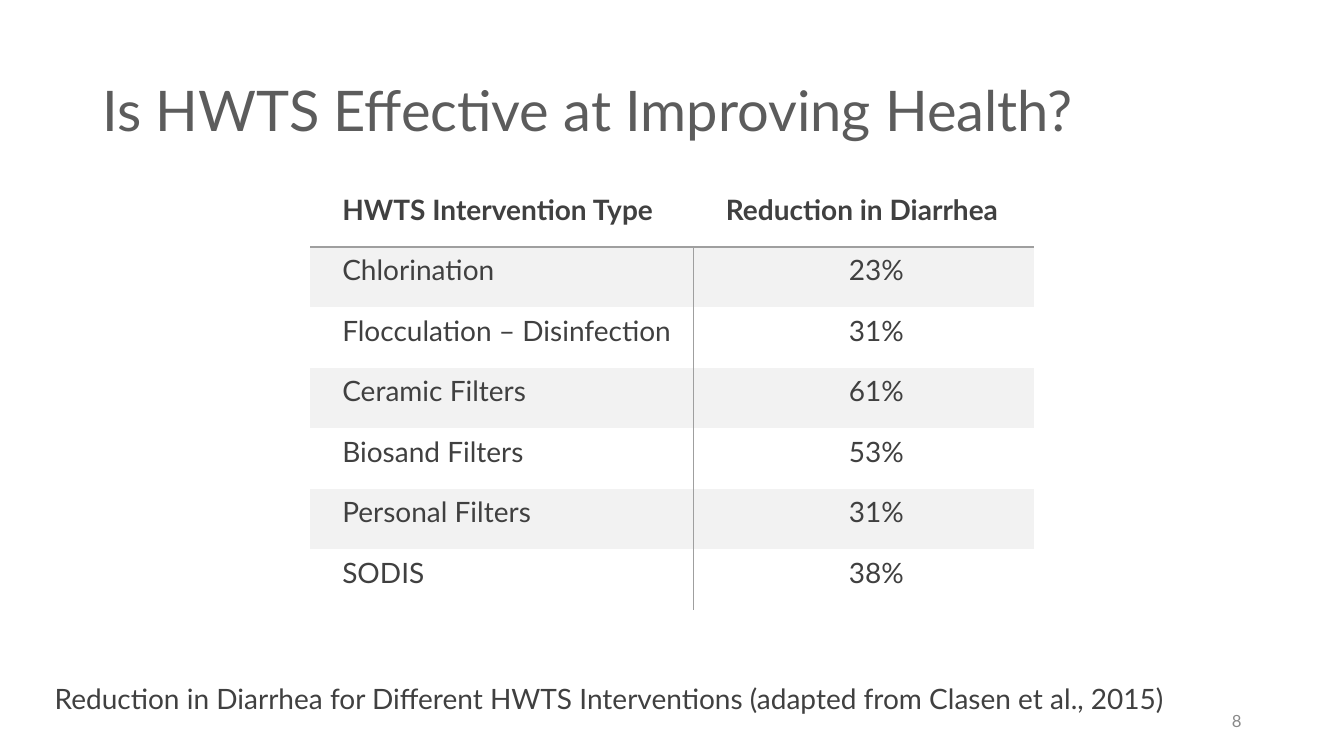
from lxml.etree import SubElement
from pptx import Presentation
from pptx.dml.color import RGBColor
from pptx.enum.text import MSO_ANCHOR, PP_ALIGN
from pptx.oxml.ns import qn
from pptx.util import Pt

WHITE = RGBColor(0xFF, 0xFF, 0xFF)
BAND = RGBColor(0xF2, 0xF2, 0xF2)
RULE = RGBColor(0x9F, 0x9F, 0x9F)
TITLE = RGBColor(0x5C, 0x5C, 0x5C)
BODY = RGBColor(0x40, 0x40, 0x40)
MUTED = RGBColor(0x89, 0x89, 0x89)
FACE = "Lato"

ROWS = [
    ("HWTS Intervention Type", "Reduction in Diarrhea"),
    ("Chlorination", "23%"),
    ("Flocculation – Disinfection", "31%"),
    ("Ceramic Filters", "61%"),
    ("Biosand Filters", "53%"),
    ("Personal Filters", "31%"),
    ("SODIS", "38%"),
]


def style(para, size, color, bold=False):
    """Format every run of a paragraph."""
    for run in para.runs:
        font = run.font
        font.name, font.size, font.bold = FACE, Pt(size), bold
        font.color.rgb = color


def add_text(slide, box, text, size, color, align=PP_ALIGN.LEFT):
    """Place one wrapped line of text, centred vertically in its box."""
    frame = slide.shapes.add_textbox(*map(Pt, box)).text_frame
    frame.word_wrap = True
    frame.vertical_anchor = MSO_ANCHOR.MIDDLE
    frame.text = text
    para = frame.paragraphs[0]
    para.alignment = align
    style(para, size, color)
    return frame


def set_edges(cell, shown):
    """Rule the named sides of a cell and clear the others."""
    props = cell._tc.get_or_add_tcPr()
    for side in "LRTB":
        line = SubElement(props, qn(f"a:ln{side}"), w=str(Pt(1)))
        if side in shown:
            fill = SubElement(line, qn("a:solidFill"))
            SubElement(fill, qn("a:srgbClr"), val=str(RULE))
        else:
            SubElement(line, qn("a:noFill"))


def fill_cell(cell, text, row, col):
    """Write and format one cell by its place in the table."""
    head = row == 0
    edges = "B" if head else "RL"[col] + ("T" if row == 1 else "")
    set_edges(cell, edges)
    cell.fill.solid()
    cell.fill.fore_color.rgb = BAND if row % 2 else WHITE
    cell.vertical_anchor = MSO_ANCHOR.MIDDLE
    cell.margin_left = cell.margin_right = Pt(5)
    cell.margin_top = cell.margin_bottom = 0
    cell.text_frame.text = text
    para = cell.text_frame.paragraphs[0]
    props = para._p.get_or_add_pPr()
    props.set("marL", str(Pt(36)))
    props.set("indent", str(Pt(-18)))
    para.alignment = PP_ALIGN.CENTER if col and not head else PP_ALIGN.LEFT
    para.line_spacing = Pt(14)
    para.space_after = Pt(6)
    style(para, 20, BODY, head)


def add_grid(slide, box, share):
    """Place the table of results, its first column taking the given share."""
    left, top, width, height = box
    grid = slide.shapes.add_table(len(ROWS), 2, *map(Pt, box)).table
    grid.horz_banding = False
    grid.columns[0].width = Pt(width * share)
    grid.columns[1].width = Pt(width * (1 - share))
    for row, texts in enumerate(ROWS):
        grid.rows[row].height = Pt(height / len(ROWS))
        for col, text in enumerate(texts):
            fill_cell(grid.cell(row, col), text, row, col)


def add_note(slide, box):
    """Place the caption that names the source of the data."""
    text = ("Reduction in Diarrhea for Different HWTS Interventions "
            "(adapted from Clasen et al., 2015)")
    frame = add_text(slide, box, text, 20, BODY)
    frame.margin_right = Pt(2)


def add_title(slide, box):
    """Place the slide title."""
    text = "Is HWTS Effective at Improving Health?"
    frame = add_text(slide, box, text, 40, TITLE)
    frame.paragraphs[0].line_spacing = 0.9


def main():
    """Build and save the slide."""
    deck = Presentation()
    deck.slide_width, deck.slide_height = Pt(960), Pt(540)
    slide = deck.slides.add_slide(deck.slide_layouts[6])
    add_title(slide, (66, 28.8, 828, 104.4))
    add_text(slide, (678, 500.4, 216, 28.8), "8", 12, MUTED, PP_ALIGN.RIGHT)
    add_grid(slide, (221.5, 133.2, 517, 302.4), 0.53)
    add_note(slide, (32, 483.2, 854.6, 31.5))
    deck.save("out.pptx")


if __name__ == "__main__":
    main()
